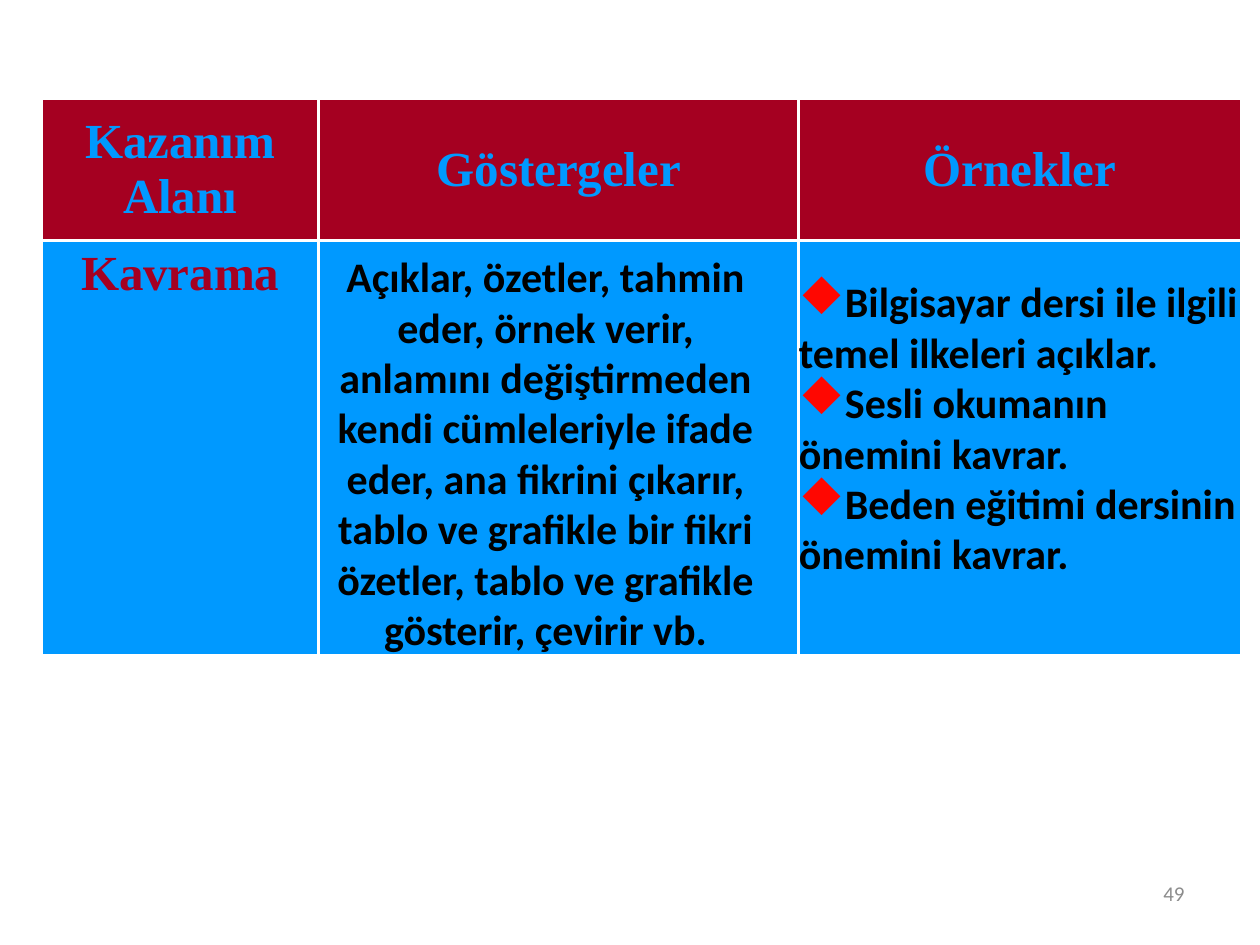
from lxml import etree
from pptx import Presentation
from pptx.dml.color import RGBColor
from pptx.enum.text import MSO_ANCHOR, PP_ALIGN
from pptx.oxml.ns import qn
from pptx.util import Inches, Pt

LEFT, CENTER, RIGHT = PP_ALIGN.LEFT, PP_ALIGN.CENTER, PP_ALIGN.RIGHT
TOP, MIDDLE = MSO_ANCHOR.TOP, MSO_ANCHOR.MIDDLE
BODY_FONT, TABLE_FONT = "Calibri", "Times New Roman"
BULLET_FONT, DIAMOND = "Wingdings", "u"
RED, BLUE, WHITE, BLACK, GRAY = "A50021", "0099FF", "FFFFFF", "000000", "8C8C8C"
BULLET_RED = "FF0701"


def color(value):
    return RGBColor.from_string(value)


class SlideBuilder:
    """Holds the style and the current slide, and adds each kind of element."""

    def __init__(self, slide):
        self.slide = slide

    def run(self, paragraph, text, size, font, hex_color, bold=True):
        run = paragraph.add_run()
        run.text = text
        run.font.size = Pt(size)
        run.font.name = font
        run.font.bold = bold
        run.font.color.rgb = color(hex_color)

    def bullet(self, paragraph):
        properties = paragraph._p.get_or_add_pPr()
        bullet_color = etree.SubElement(properties, qn("a:buClr"))
        etree.SubElement(bullet_color, qn("a:srgbClr"), val=BULLET_RED)
        etree.SubElement(properties, qn("a:buSzPct"), val="110000")
        etree.SubElement(properties, qn("a:buFont"), typeface=BULLET_FONT,
                         pitchFamily="2", charset="2")
        etree.SubElement(properties, qn("a:buChar"), char=DIAMOND)

    def text(self, box, texts, align=LEFT, size=24, hex_color=BLACK, bold=True,
             anchor=TOP, bulleted=False):
        shape = self.slide.shapes.add_textbox(*map(Inches, box))
        frame = shape.text_frame
        frame.word_wrap = True
        frame.vertical_anchor = anchor
        if bulleted:
            frame.margin_left = frame.margin_right = 0
            frame.margin_top = frame.margin_bottom = 0
        for index, text in enumerate(texts):
            paragraph = frame.add_paragraph() if index else frame.paragraphs[0]
            paragraph.alignment = align
            if bulleted:
                self.bullet(paragraph)
            self.run(paragraph, text, size, BODY_FONT, hex_color, bold)

    def borders(self, cell, sides):
        properties = cell._tc.get_or_add_tcPr()
        for side in sides:
            line = etree.SubElement(properties, qn(f"a:ln{side}"), w=str(Pt(2)))
            fill = etree.SubElement(line, qn("a:solidFill"))
            etree.SubElement(fill, qn("a:srgbClr"), val=WHITE)

    def table(self, box, widths, heights, rows):
        shape = self.slide.shapes.add_table(len(rows), len(widths), *map(Inches, box))
        table = shape.table
        for column, width in zip(table.columns, widths):
            column.width = Inches(width)
        for row_index, (height, texts) in enumerate(zip(heights, rows)):
            table.rows[row_index].height = Inches(height)
            header = row_index == 0
            for column_index, text in enumerate(texts):
                cell = table.cell(row_index, column_index)
                self.borders(cell, "LRTB")
                cell.fill.solid()
                cell.fill.fore_color.rgb = color(RED if header else BLUE)
                cell.vertical_anchor = MIDDLE if header else TOP
                if text:
                    paragraph = cell.text_frame.paragraphs[0]
                    paragraph.alignment = CENTER
                    self.run(paragraph, text, 28, TABLE_FONT, BLUE if header else RED)


def main():
    presentation = Presentation()
    presentation.slide_width = Inches(10)
    presentation.slide_height = Inches(7.5)
    builder = SlideBuilder(presentation.slides.add_slide(presentation.slide_layouts[6]))

    builder.text((7.17, 6.83, 2.33, 0.52), ["49"], RIGHT, 12, GRAY, False, MIDDLE)
    builder.table(
        (0.33, 0.78, 9.52, 4.42), (2.2, 3.81, 3.51), (1.13, 3.29),
        [("Kazanım Alanı", "Göstergeler", "Örnekler"), ("Kavrama", "", "")],
    )
    builder.text(
        (2.48, 1.94, 3.7, 3.3),
        ["Açıklar, özetler, tahmin eder, örnek verir, anlamını değiştirmeden "
         "kendi cümleleriyle ifade eder, ana fikrini çıkarır, tablo ve grafikle "
         "bir fikri özetler, tablo ve grafikle gösterir, çevirir vb."],
        CENTER,
    )
    builder.text(
        (6.34, 2.19, 3.54, 2.4),
        ["Bilgisayar dersi ile ilgili temel ilkeleri açıklar.",
         "Sesli okumanın önemini kavrar.",
         "Beden eğitimi dersinin önemini kavrar."],
        bulleted=True,
    )
    presentation.save("out.pptx")


if __name__ == "__main__":
    main()
